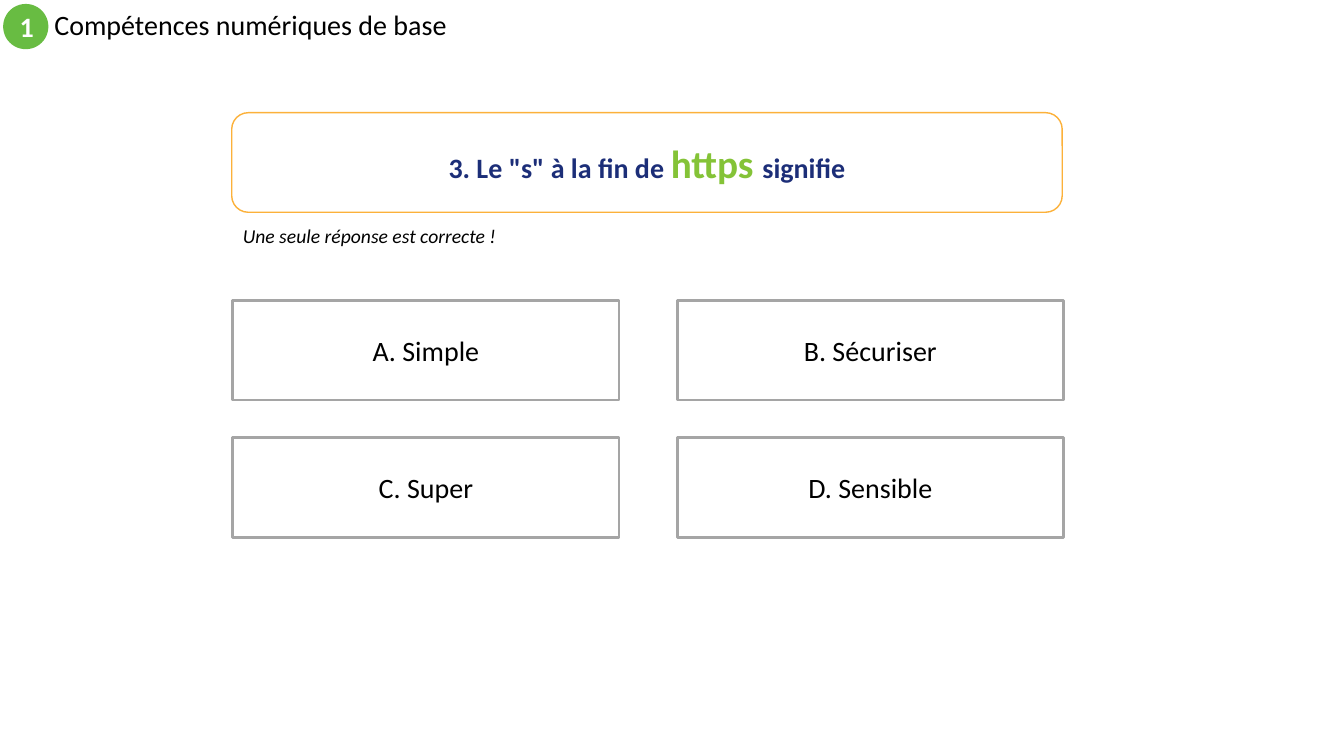
from pptx import Presentation
from pptx.dml.color import RGBColor
from pptx.enum import shapes, text
from pptx.util import Cm, Pt

BLACK = RGBColor(0x00, 0x00, 0x00)
WHITE = RGBColor(0xFF, 0xFF, 0xFF)
BADGE_GREEN = RGBColor(0x68, 0xBC, 0x42)
WORD_GREEN = RGBColor(0x84, 0xC3, 0x37)
NAVY = RGBColor(0x1C, 0x2E, 0x78)
ORANGE = RGBColor(0xFC, 0xB1, 0x3A)
GREY = RGBColor(0xA5, 0xA5, 0xA5)
FONT = "Calibri"

# Runs: wording, size in points, colour, bold, italic
SECTION_NUMBER = [("1", 20, WHITE, True, False)]
SECTION_TITLE = [("Compétences numériques de base", 20, BLACK, False, False)]
QUESTION = [
    ('3. Le "s" à la fin de ', 20, NAVY, True, False),
    ("https ", 28, WORD_GREEN, True, False),
    ("signifie", 20, NAVY, True, False),
]
HINT = [("Une seule réponse est correcte !", 14, BLACK, False, True)]
ANSWERS = ["A. Simple", "B. Sécuriser", "C. Super", "D. Sensible"]

# Lengths in centimetres
ANSWER_LEFT, ANSWER_TOP = 5.87, 7.57
ANSWER_WIDTH, ANSWER_HEIGHT = 9.73, 2.51
COLUMN_STEP, ROW_STEP = 11.2, 3.46
COLUMNS = 2


def write(shape, runs, align, anchor=text.MSO_ANCHOR.MIDDLE):
    frame = shape.text_frame
    frame.word_wrap = True
    frame.vertical_anchor = anchor
    paragraph = frame.paragraphs[0]
    paragraph.alignment = align
    for wording, size, colour, bold, italic in runs:
        run = paragraph.add_run()
        run.text = wording
        font = run.font
        font.name, font.size = FONT, Pt(size)
        font.bold, font.italic = bold, italic
        font.color.rgb = colour
    return paragraph


def add_box(slide, kind, box, runs, fill, line=None, line_width=1):
    """Add a filled shape with centred text; without a line colour it has no outline."""
    shape = slide.shapes.add_shape(kind, *map(Cm, box))
    shape.shadow.inherit = False
    shape.fill.solid()
    shape.fill.fore_color.rgb = fill
    if line is None:
        shape.line.fill.background()
    else:
        shape.line.color.rgb = line
        shape.line.width = Pt(line_width)
    write(shape, runs, text.PP_ALIGN.CENTER)
    return shape


def main():
    presentation = Presentation()
    presentation.slide_width, presentation.slide_height = Cm(33.87), Cm(19.05)
    slide = presentation.slides.add_slide(presentation.slide_layouts[6])
    preset = shapes.MSO_SHAPE

    add_box(slide, preset.OVAL, (0.08, 0.1, 1.14, 1.14), SECTION_NUMBER, BADGE_GREEN)
    title = slide.shapes.add_textbox(Cm(1.12), Cm(0.1), Cm(20.32), Cm(1.14))
    write(title, SECTION_TITLE, text.PP_ALIGN.LEFT).line_spacing = 0.9

    add_box(slide, preset.ROUNDED_RECTANGLE, (5.84, 2.84, 20.93, 2.51),
            QUESTION, WHITE, ORANGE)
    hint = slide.shapes.add_textbox(Cm(5.87), Cm(5.51), Cm(8.94), Cm(0.86))
    write(hint, HINT, text.PP_ALIGN.LEFT, text.MSO_ANCHOR.TOP)
    hint.text_frame.auto_size = text.MSO_AUTO_SIZE.SHAPE_TO_FIT_TEXT

    for index, answer in enumerate(ANSWERS):
        row, column = divmod(index, COLUMNS)
        box = (ANSWER_LEFT + column * COLUMN_STEP, ANSWER_TOP + row * ROW_STEP,
               ANSWER_WIDTH, ANSWER_HEIGHT)
        add_box(slide, preset.RECTANGLE, box, [(answer, 20, BLACK, False, False)],
                WHITE, GREY, 2)

    presentation.save("out.pptx")


if __name__ == "__main__":
    main()
